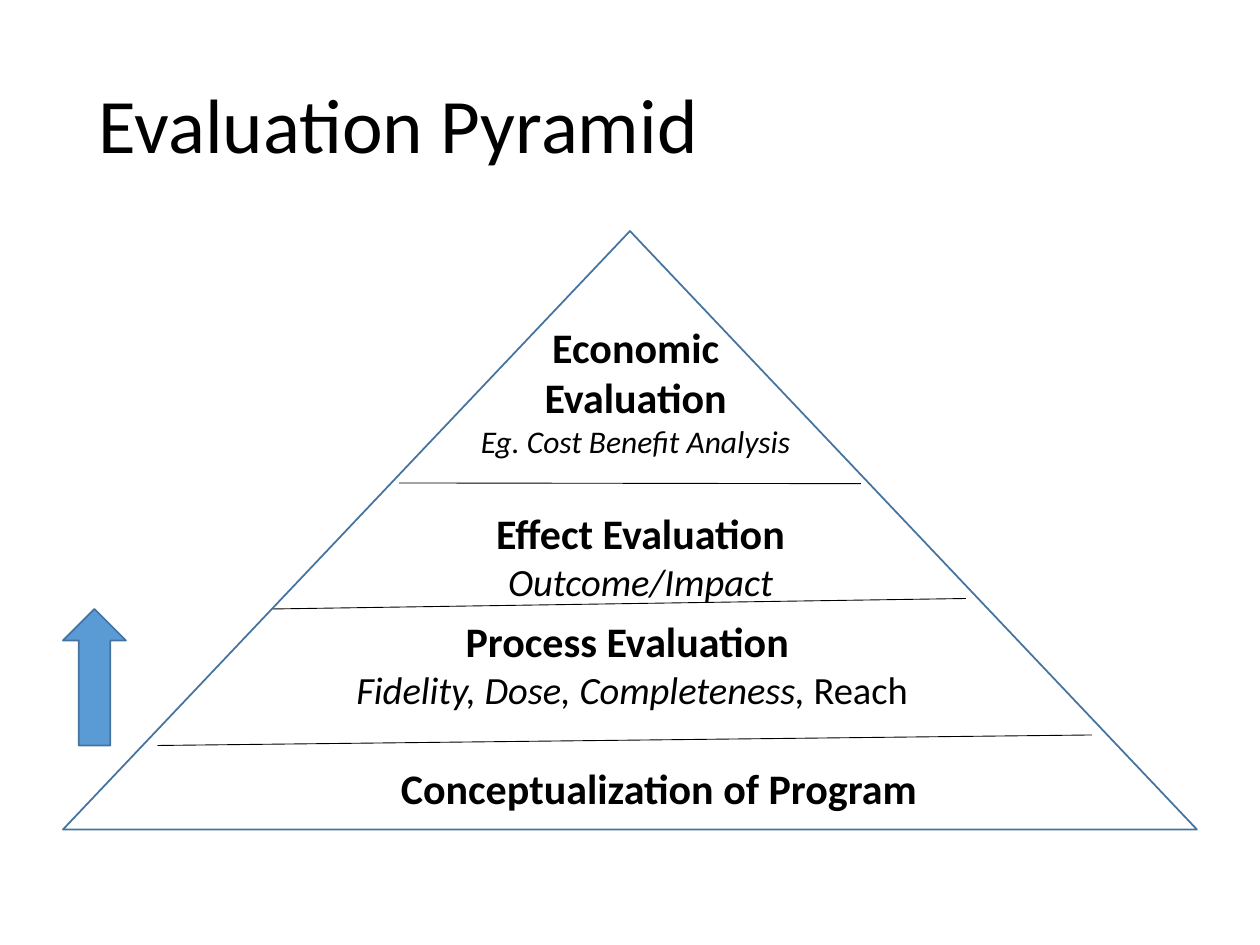
import pptx
import pptx.util
import pptx.dml.color
import pptx.enum.shapes
import pptx.enum.text
import lxml.etree

Pt = pptx.util.Pt
RGB = pptx.dml.color.RGBColor
SHAPE = pptx.enum.shapes.MSO_SHAPE
ALIGN = pptx.enum.text.PP_ALIGN
ANCHOR = pptx.enum.text.MSO_ANCHOR

THEME = {
    "font": "Calibri",
    "text": RGB(0, 0, 0),
    "outline": RGB(0x43, 0x73, 0x9E),
    "arrow": RGB(0x5B, 0x9B, 0xD5),
    "title": 44,
    "level": 24,
    "detail": 22,
    "example": 18,
}

TITLE = {"box": (49.5, 21, 621, 104.4), "text": "Evaluation Pyramid"}
LEVELS = [
    {"box": (264, 180, 198.5, 87.2), "wrap": True, "align": ALIGN.CENTER,
     "name": "Economic Evaluation", "size": "example",
     "details": [("Eg. Cost Benefit Analysis", True)]},
    {"box": (192, 286.5, 348, 63.4), "wrap": True, "align": ALIGN.CENTER,
     "name": "Effect Evaluation", "size": "detail",
     "details": [("Outcome/Impact", True)]},
    {"box": (195, 348, 332.4, 63.4), "wrap": False, "align": ALIGN.CENTER,
     "name": "Process Evaluation ", "size": "detail",
     "details": [("Fidelity, Dose, Completeness, ", True), ("Reach", False)]},
    {"box": (222, 432, 312.5, 36), "wrap": False, "align": ALIGN.LEFT,
     "name": "Conceptualization of Program", "size": "detail", "details": []},
]
DIVIDERS = [
    (90, 426, 624, 420),
    (156, 348, 552, 342),
    (228, 276, 492, 276.4),
]
PYRAMID = (36, 132, 648, 342)
UP_ARROW = (36, 348, 36, 78)


def points(lengths):
    return [Pt(length) for length in lengths]


def add_frame(slide, box, wrap=True):
    frame = slide.shapes.add_textbox(*points(box)).text_frame
    frame.word_wrap = wrap
    return frame


def style(paragraph, size, bold=False):
    font = paragraph.font
    font.name = THEME["font"]
    font.size = Pt(THEME[size])
    font.bold = bold
    font.color.rgb = THEME["text"]


def add_title(slide):
    frame = add_frame(slide, TITLE["box"])
    frame.vertical_anchor = ANCHOR.MIDDLE
    heading = frame.paragraphs[0]
    heading.text = TITLE["text"]
    heading.line_spacing = 0.9
    style(heading, "title")


def add_level(slide, level):
    frame = add_frame(slide, level["box"], level["wrap"])
    heading = frame.paragraphs[0]
    heading.text = level["name"]
    heading.alignment = level["align"]
    style(heading, "level", bold=True)
    if level["details"]:
        detail = frame.add_paragraph()
        detail.alignment = level["align"]
        style(detail, level["size"])
        for text, italic in level["details"]:
            run = detail.add_run()
            run.text = text
            run.font.italic = italic


def add_outlined(slide, kind, box, fill=None):
    shape = slide.shapes.add_shape(kind, *points(box))
    shape.shadow.inherit = False
    shape.line.color.rgb = THEME["outline"]
    shape.line.width = Pt(1)
    if fill is None:
        shape.fill.background()
    else:
        shape.fill.solid()
        shape.fill.fore_color.rgb = fill


def add_divider(slide, ends):
    divider = slide.shapes.add_connector(
        pptx.enum.shapes.MSO_CONNECTOR.STRAIGHT, *points(ends))
    divider.line.color.rgb = THEME["text"]
    divider.line.width = Pt(0.5)
    lxml.etree.SubElement(divider._element.spPr, pptx.oxml.ns.qn("a:effectLst"))


def main():
    deck = pptx.Presentation()
    deck.slide_width, deck.slide_height = Pt(720), Pt(540)
    slide = deck.slides.add_slide(deck.slide_layouts[6])
    add_title(slide)
    add_outlined(slide, SHAPE.ISOSCELES_TRIANGLE, PYRAMID)
    for level in reversed(LEVELS):
        add_level(slide, level)
    for ends in DIVIDERS:
        add_divider(slide, ends)
    add_outlined(slide, SHAPE.UP_ARROW, UP_ARROW, THEME["arrow"])
    deck.save("out.pptx")


if __name__ == "__main__":
    main()
